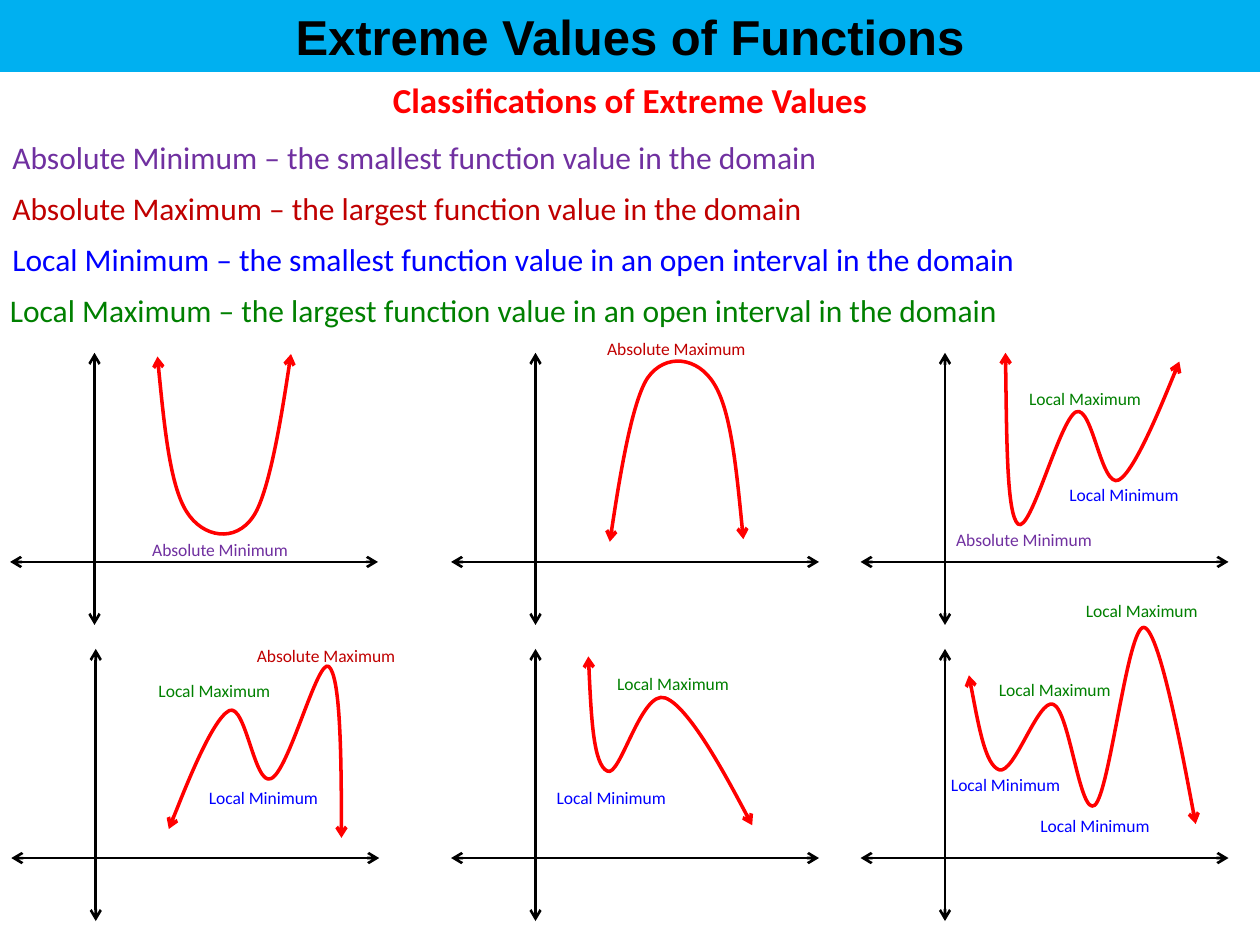
import pptx
import pptx.util
import pptx.dml.color
import pptx.enum.shapes
import pptx.enum.text
import pptx.oxml.ns
from lxml import etree

Inches = pptx.util.Inches
Align = pptx.enum.text.PP_ALIGN
qn = pptx.oxml.ns.qn


def tint(code):
    return pptx.dml.color.RGBColor.from_string(code)


class Board:
    """Holds the style and the current slide."""

    black, red, band = "000000", "FF0000", "00B0F0"
    body = "Calibri"
    hues = {
        "Absolute Minimum": "7030A0",
        "Absolute Maximum": "C00000",
        "Local Minimum": "0000FF",
        "Local Maximum": "008000",
    }

    def __init__(self, slide):
        self.slide = slide
        self.shapes = slide.shapes

    def letter(self, shape, text, hue, size, align=Align.LEFT, **extra):
        frame = shape.text_frame
        frame.word_wrap = True
        frame.auto_size = pptx.enum.text.MSO_AUTO_SIZE.SHAPE_TO_FIT_TEXT
        para = frame.paragraphs[0]
        para.alignment = align
        run = para.add_run()
        run.text = text
        look = {"name": self.body, "size": pptx.util.Pt(size), **extra}
        for key, value in look.items():
            setattr(run.font, key, value)
        run.font.color.rgb = tint(hue)

    def banner(self, text, box):
        kind = pptx.enum.shapes.MSO_SHAPE.RECTANGLE
        shape = self.shapes.add_shape(kind, *map(Inches, box))
        shape.shadow.inherit = False
        shape.fill.solid()
        shape.fill.fore_color.rgb = tint(self.band)
        shape.line.color.rgb = tint(self.band)
        shape.line.width = pptx.util.Pt(0.75)
        self.letter(shape, text, self.black, 28, Align.CENTER,
                    name="Arial", bold=True)

    def text(self, text, box, hue, size, align=Align.LEFT, **extra):
        shape = self.shapes.add_textbox(*map(Inches, box))
        self.letter(shape, text, hue, size, align, **extra)

    def label(self, text, left, top, width):
        align = Align.CENTER if text == "Local Minimum" else Align.LEFT
        self.text(text, (left, top, width, 0.27), self.hues[text], 10, align)

    def stroke(self, shape, hue, width):
        """Style a line with arrows at both ends and no shadow."""
        shape.line.color.rgb = tint(hue)
        shape.line.width = pptx.util.Pt(width)
        props = shape.element.spPr
        line = props.find(qn("a:ln"))
        for end in ("a:headEnd", "a:tailEnd"):
            etree.SubElement(line, qn(end), type="arrow")
        if props.find(qn("a:effectLst")) is None:
            etree.SubElement(props, qn("a:effectLst"))

    def axes(self, x, top):
        """Draw both axes; x is the vertical axis, top its upper end."""
        level = top + 1.66
        for ends in ((x, top, x, top + 2.16),
                     (x - 0.67, level, x + 2.25, level)):
            kind = pptx.enum.shapes.MSO_CONNECTOR.STRAIGHT
            axis = self.shapes.add_connector(kind, *map(Inches, ends))
            self.stroke(axis, self.black, 1.5)

    def curve(self, points):
        """Draw a start point followed by groups of three Bezier points."""
        start, *rest = [(Inches(x), Inches(y)) for x, y in points]
        maker = self.shapes.build_freeform(*start)
        maker.add_line_segments(rest, close=False)
        shape = maker.convert_to_shape()
        route = shape.element.spPr.find(".//" + qn("a:path"))
        steps = route.findall(qn("a:lnTo"))
        for i in range(0, len(steps), 3):
            bend = etree.SubElement(route, qn("a:cubicBezTo"))
            for step in steps[i:i + 3]:
                bend.append(step[0])
                route.remove(step)
        shape.fill.background()
        self.stroke(shape, self.red, 2)


# Definitions: term, meaning, left, top
TERMS = [
    ("Absolute Minimum", "the smallest function value in the domain", 0, 1.05),
    ("Absolute Maximum", "the largest function value in the domain", 0, 1.45),
    ("Local Minimum",
     "the smallest function value in an open interval in the domain", 0, 1.86),
    ("Local Maximum",
     "the largest function value in an open interval in the domain",
     -0.02, 2.26),
]

# Graphs: vertical axis, top of axis, curve points
GRAPHS = [
    (0.75, 2.8, [(1.25, 2.83),
                 (1.3, 3.34), (1.35, 3.85), (1.48, 4.06),
                 (1.61, 4.27), (1.87, 4.31), (2.01, 4.1),
                 (2.15, 3.9), (2.31, 2.81), (2.31, 2.81)]),
    (4.25, 2.8, [(5.9, 4.28),
                 (5.85, 3.77), (5.8, 3.26), (5.67, 3.05),
                 (5.54, 2.83), (5.28, 2.8), (5.14, 3),
                 (5, 3.21), (4.84, 4.3), (4.84, 4.3)]),
    (7.5, 2.8, [(7.98, 2.8),
                (7.99, 3.44), (7.99, 4.08), (8.08, 4.16),
                (8.18, 4.24), (8.41, 3.33), (8.54, 3.27),
                (8.67, 3.21), (8.74, 3.88), (8.88, 3.81),
                (9.01, 3.74), (9.36, 2.87), (9.36, 2.87)]),
    (0.76, 5.15, [(2.71, 6.65),
                  (2.71, 6.01), (2.7, 5.37), (2.61, 5.29),
                  (2.52, 5.22), (2.29, 6.13), (2.15, 6.18),
                  (2.02, 6.24), (1.95, 5.58), (1.82, 5.64),
                  (1.68, 5.71), (1.34, 6.58), (1.34, 6.58)]),
    (4.25, 5.15, [(4.67, 5.21),
                  (4.69, 5.64), (4.71, 6.07), (4.82, 6.12),
                  (4.92, 6.18), (5.09, 5.47), (5.28, 5.54),
                  (5.48, 5.61), (5.97, 6.55), (5.97, 6.55)]),
    (7.5, 5.15, [(7.69, 5.36),
                 (7.76, 5.72), (7.82, 6.07), (7.93, 6.11),
                 (8.05, 6.15), (8.24, 5.54), (8.36, 5.59),
                 (8.49, 5.64), (8.57, 6.49), (8.69, 6.39),
                 (8.81, 6.28), (8.95, 4.96), (9.08, 4.98),
                 (9.21, 5), (9.48, 6.5), (9.49, 6.54)]),
]

# Labels: term, then left, top and width of each
LABELS = {
    "Absolute Minimum": [(1.11, 4.23, 1.33), (7.49, 4.15, 1.36)],
    "Absolute Maximum": [(4.72, 2.63, 1.39), (1.94, 5.07, 1.42)],
    "Local Minimum": [(8.36, 3.79, 1.12), (1.53, 6.2, 1.12),
                      (4.29, 6.2, 1.12), (7.42, 6.09, 1.12),
                      (8.13, 6.42, 1.12)],
    "Local Maximum": [(8.07, 3.03, 1.1), (1.16, 5.35, 1.1), (4.8, 5.29, 1.1),
                      (7.83, 5.34, 1.1), (8.52, 4.71, 1.1)],
}


def main():
    deck = pptx.Presentation()
    deck.slide_width, deck.slide_height = Inches(10), Inches(7.5)
    board = Board(deck.slides.add_slide(deck.slide_layouts[6]))

    # Headings
    board.banner("Extreme Values of Functions", (0, 0, 10, 0.57))
    board.text("Classifications of Extreme Values", (0, 0.57, 10, 0.44),
               board.red, 20, Align.CENTER, bold=True)

    # Definitions
    for term, sense, left, top in TERMS:
        board.text(f"{term} – {sense}", (left, top, 10, 0.4),
                   board.hues[term], 18)

    # Graphs
    for x, top, points in GRAPHS:
        board.axes(x, top)
        board.curve(points)

    # Labels
    for term, spots in LABELS.items():
        for spot in spots:
            board.label(term, *spot)

    deck.save("out.pptx")


if __name__ == "__main__":
    main()
